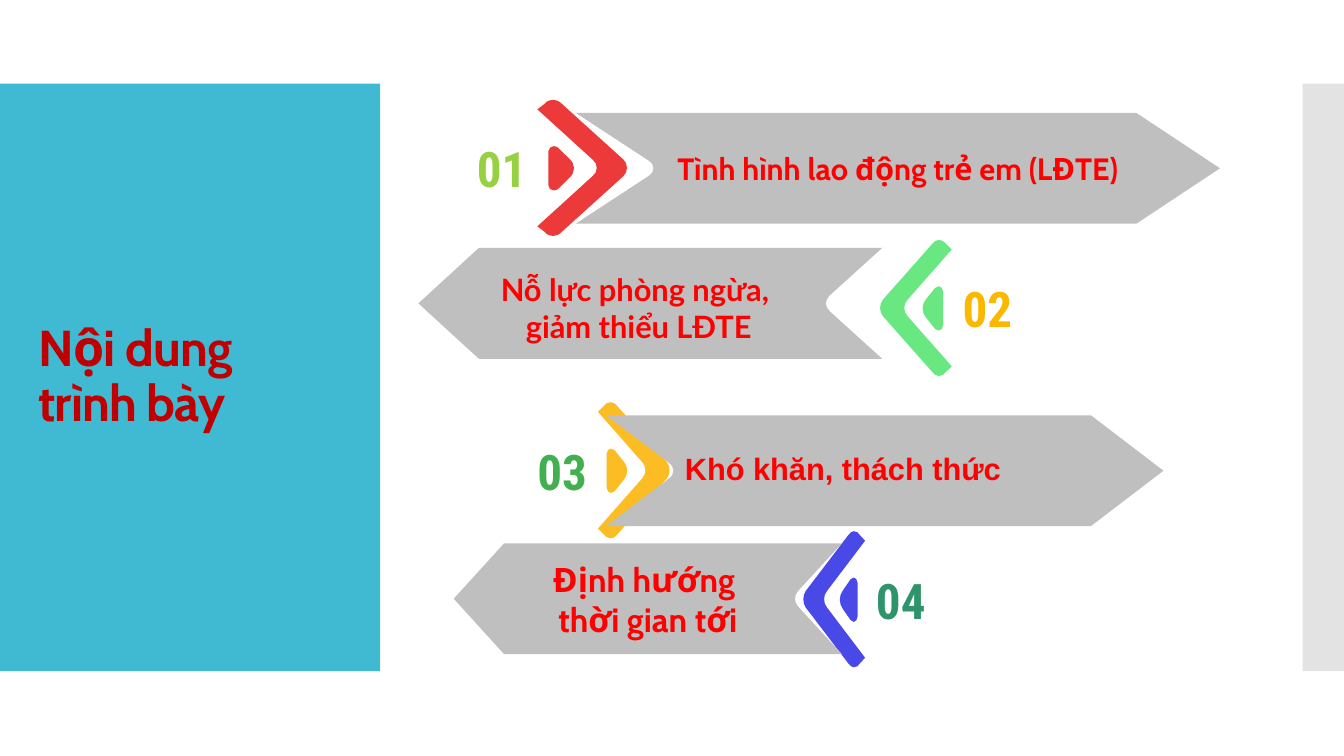
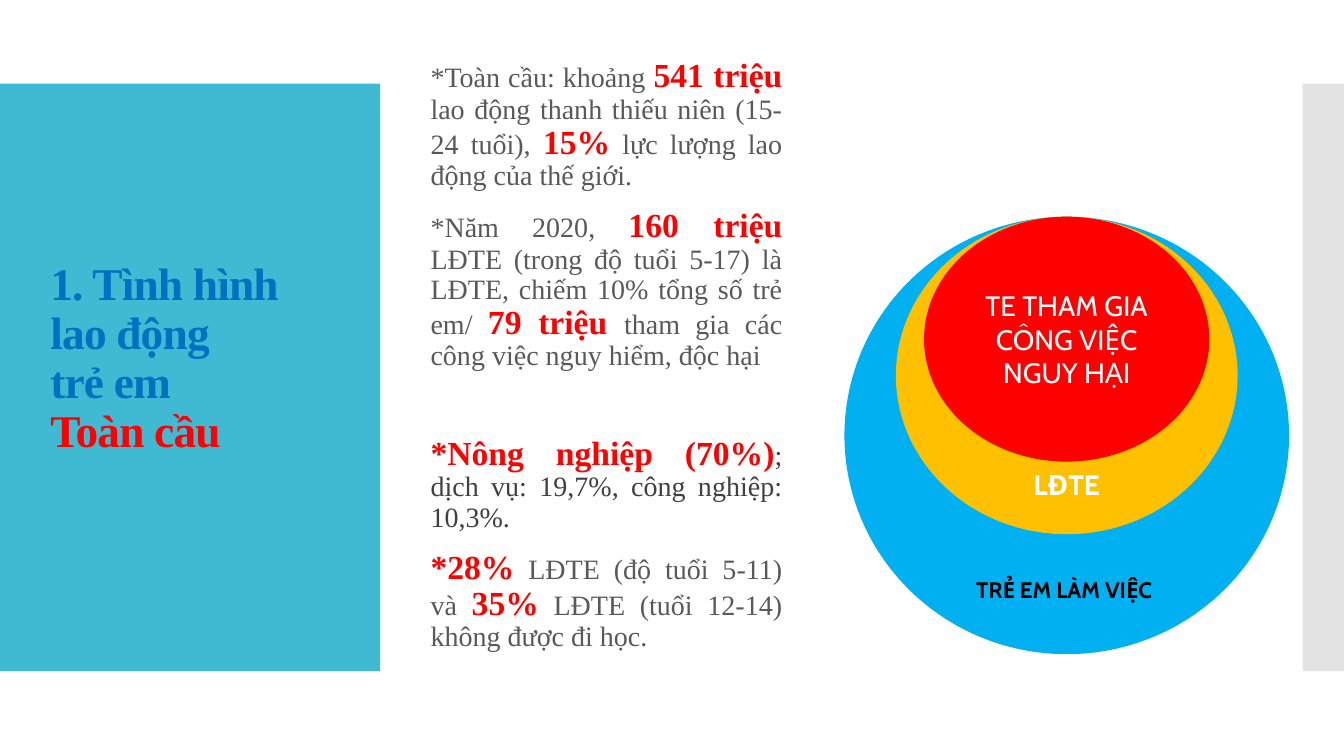
from collections import namedtuple

from lxml.etree import SubElement
from pptx import Presentation
from pptx.dml.color import RGBColor
from pptx.enum.shapes import MSO_SHAPE
from pptx.enum.text import MSO_ANCHOR, MSO_AUTO_SIZE, PP_ALIGN
from pptx.oxml.ns import qn
from pptx.util import Inches, Pt

COLORS = {
    "panel": "40BAD2", "edge": "C8C8C8", "band": "BFBFBF",
    "red": "FF0000", "dark_red": "C00000", "blue": "0070C0",
    "text": "595959", "dark": "404040", "black": "000000", "white": "FFFFFF",
    "sky": "00B0F0", "gold": "FFC000",
    "coral": "EC3A3B", "mint": "69E781", "amber": "FCBD24", "indigo": "4949E7",
    "lime": "96D141", "orange": "FAB900", "green": "42B051", "teal": "2E946B",
}

CHEVRON = [
    (0.18, 0), (0.14, 0, 0.1, 0.01, 0.08, 0.03), (0, 0.07), (0.61, 0.44),
    (0.67, 0.47, 0.67, 0.53, 0.61, 0.56), (0, 0.93), (0.08, 0.97),
    (0.1, 0.99, 0.14, 1, 0.18, 1), (0.21, 1, 0.24, 0.99, 0.27, 0.97),
    (0.95, 0.56), (1, 0.53, 1, 0.47, 0.95, 0.44), (0.27, 0.03),
    (0.24, 0.01, 0.21, 0, 0.18, 0),
]
DOT = [
    (0.2, 0), (0.11, 0, 0, 0.05, 0, 0.12), (0, 0.88),
    (0, 0.95, 0.11, 1, 0.2, 1), (0.27, 1, 0.33, 0.98, 0.37, 0.96),
    (0.78, 0.71), (1, 0.59, 1, 0.41, 0.78, 0.29), (0.37, 0.04),
    (0.33, 0.02, 0.27, 0, 0.2, 0),
]

Step = namedtuple("Step", "num hue mark lines face size right chev band head label")
STEPS = [
    Step("01", "lime", "coral", ["Tình hình lao động trẻ em (LĐTE)"], "Cabin", 22,
         True, (5.33, 0.99, 0.9), (5.71, 1.12, 6.39), 0.83, None),
    Step("02", "orange", "mint", ["Nỗ lực phòng ngừa, ", "giảm thiểu LĐTE"], "Lato", 22,
         False, (8.72, 2.38, 0.72), (4.15, 2.46, 4.6), 0.6, (3.8, 2.74, 5.07, 0.63)),
    Step("03", "green", "amber", ["Khó khăn, thách thức"], "Arial", 22,
         True, (5.93, 3.99, 0.72), (6.01, 4.12, 5.53), 0.72, (6.67, 4.41, 3.38, 0.47)),
    Step("04", "teal", "indigo", ["Định hướng ", "thời gian tới"], "Cabin", 24,
         False, (7.96, 5.27, 0.62), (4.5, 5.39, 3.85), 0.5, None),
]

FACTS = [
    ("*Toàn cầu: khoảng |541 triệu |lao động thanh thiếu niên (15-24 tuổi), |15%"
     "| lực lượng lao động của thế giới.", "text", 12),
    ("*Năm 2020, |160 triệu |LĐTE (trong độ tuổi 5-17) là LĐTE, chiếm 10% tổng số "
     "trẻ em/ |79 triệu |tham gia các công việc nguy hiểm, độc hại", "text", 12),
    ("|*Nông nghiệp (70%)|; dịch vụ: 19,7%, công nghiệp: 10,3%.", "dark", 46),
    ("|*28%| LĐTE (độ tuổi 5-11) và |35%| LĐTE (tuổi 12-14) không được đi học.",
     "text", 12),
]

RINGS = [
    ("TRẺ EM LÀM VIỆC ", 16, True, "black", "sky", 4.41, 4.34),
    ("LĐTE", 20, True, "white", "gold", 3.39, 3.15),
    ("TE THAM GIA CÔNG VIỆC NGUY HẠI", 20, False, "white", "red", 2.83, 2.43),
]


def tint(name):
    return RGBColor.from_string(COLORS[name])


def paint(shape, color):
    shape.shadow.inherit = False
    shape.fill.solid()
    shape.fill.fore_color.rgb = tint(color)
    shape.line.fill.background()
    return shape


def dress(font, face, size, color, bold=True):
    font.name, font.size, font.bold = face, Pt(size), bold
    font.color.rgb = tint(color)


def place(shape, box):
    shape.left, shape.top, shape.width, shape.height = map(Inches, box)


def write(shape, lines, face, size, color, align, bold=True):
    frame = shape.text_frame
    frame.word_wrap = True
    frame.auto_size = MSO_AUTO_SIZE.NONE
    frame.vertical_anchor = MSO_ANCHOR.MIDDLE
    frame.text = "\n".join(lines)
    for para in frame.paragraphs:
        para.alignment = align
        for item in (para, *para.runs):
            dress(item.font, face, size, color, bold)


def set_title(slide, box, text, face, size, color):
    title = slide.shapes.title
    place(title, box)
    write(title, [text], face, size, color, PP_ALIGN.LEFT)
    title.text_frame.paragraphs[0].line_spacing = 0.9
    for props in title.element.iter(qn("a:rPr")):
        props.set("spc", "-60")
    return title


def add_bands(deck, slide):
    tree = deck.slide_master.shapes.element
    for order, (left, width, color) in enumerate([(0, 3.77, "panel"), (12.92, 0.42, "edge")]):
        band = slide.shapes.add_shape(
            MSO_SHAPE.RECTANGLE, *map(Inches, (left, 0.83, width, 5.83)))
        paint(band, color)
        if color == "edge":
            hue = next(band.element.spPr.iter(qn("a:srgbClr")))
            SubElement(hue, qn("a:alpha"), val="50000")
        band.element.nvSpPr.cNvPr.id = 20 + order
        tree.insert(2 + order, band.element)


def bend(shape, outline):
    lines = iter(list(shape.element.iter(qn("a:lnTo"))))
    for node in outline[1:]:
        line = next(lines)
        if len(node) == 6:
            line.tag = qn("a:cubicBezTo")
            for _ in range(2):
                extra = next(lines)
                line.append(extra[0])
                extra.getparent().remove(extra)


def add_form(slide, outline, box, color, right):
    left, top, width, height = box
    points = [(Inches(left + width * (x if right else 1 - x)), Inches(top + height * y))
              for node in outline for x, y in zip(node[::2], node[1::2])]
    pen = slide.shapes.build_freeform(*points[0], scale=1.0)
    pen.add_line_segments(points[1:], close=True)
    shape = pen.convert_to_shape()
    bend(shape, outline)
    return paint(shape, color)


def add_mark(slide, box, step):
    left, top, width, height = box
    add_form(slide, CHEVRON, box, step.mark, step.right)
    inset = 0.12 if step.right else 0.58
    dot = (left + inset * width, top + 0.46, 0.3 * width, 0.44)
    add_form(slide, DOT, dot, step.mark, step.right)
    start = left - 1.01 if step.right else left + width + 0.01
    num = slide.shapes.add_textbox(*map(Inches, (start, top + 0.33, 1, 0.7)))
    align = PP_ALIGN.RIGHT if step.right else PP_ALIGN.LEFT
    write(num, [step.num], "Roboto Condensed", 35, step.hue, align)


def add_arrow(slide, box, step):
    head = step.head / box[2]
    notch, tip = 0.87 * head, 0.95 * head
    outline = [(0, 0), (notch, 0.43), (tip, 0.47, tip, 0.53, notch, 0.57),
               (0, 1), (1 - head, 1), (1, 0.5), (1 - head, 0)]
    label = add_form(slide, outline, box, "band", step.right)
    if step.label:
        label = slide.shapes.add_textbox(*map(Inches, step.label))
    else:
        label.text_frame.margin_left = label.text_frame.margin_right = Inches(0.6)
    write(label, step.lines, step.face, step.size, "red", PP_ALIGN.CENTER)


def add_facts(slide, box):
    body = slide.placeholders[1]
    place(body, box)
    frame = body.text_frame
    frame.auto_size = MSO_AUTO_SIZE.NONE
    frame.vertical_anchor = MSO_ANCHOR.MIDDLE
    frame.margin_bottom = Inches(0.36)
    for order, (text, color, gap) in enumerate(FACTS):
        para = frame.add_paragraph() if order else frame.paragraphs[0]
        para.alignment = PP_ALIGN.JUSTIFY
        para.line_spacing, para.space_before = 0.9, Pt(gap)
        for part, words in enumerate(text.split("|")):
            if words:
                run = para.add_run()
                run.text = words
                strong = part % 2 == 1
                dress(run.font, "Times New Roman", 24 if strong else 20,
                      "red" if strong else color, strong)
    for props in body.element.iter(qn("a:pPr")):
        props.set("marL", "0")
        props.set("indent", "0")
        SubElement(props, qn("a:buNone"))


def add_rings(slide, mid, top):
    for text, size, bold, ink, fill, width, height in RINGS:
        ring = slide.shapes.add_shape(
            MSO_SHAPE.OVAL, *map(Inches, (mid - width / 2, top, width, height)))
        paint(ring, fill)
        write(ring, [text], "Cabin", size, ink, PP_ALIGN.CENTER, bold)
        if bold:
            ring.text_frame.vertical_anchor = MSO_ANCHOR.BOTTOM
            ring.text_frame.margin_bottom = Inches(-0.13)


def build_list(deck):
    slide = deck.slides.add_slide(deck.slide_layouts[5])
    add_bands(deck, slide)
    set_title(slide, (0.28, 1.23, 3.22, 5.03), "Nội dung \vtrình bày",
              "Cabin", 36, "dark_red")
    for step in STEPS:
        add_mark(slide, (*step.chev, 1.35), step)
        add_arrow(slide, (*step.band, 1.1), step)


def build_world(deck):
    slide = deck.slides.add_slide(deck.slide_layouts[1])
    title = set_title(slide, (0.4, 3.26, 2.71, 0.61),
                      "1. Tình hình lao động \vtrẻ em \vToàn cầu",
                      "Times New Roman", 32.4, "blue")
    title.text_frame.paragraphs[0].runs[-1].font.color.rgb = tint("red")
    add_facts(slide, (4.17, 0.2, 3.69, 6.97))
    add_rings(slide, 10.58, 2.15)


def main():
    deck = Presentation()
    deck.slide_width, deck.slide_height = Inches(13.33), Inches(7.5)
    build_list(deck)
    build_world(deck)
    deck.save("out.pptx")


if __name__ == "__main__":
    main()
